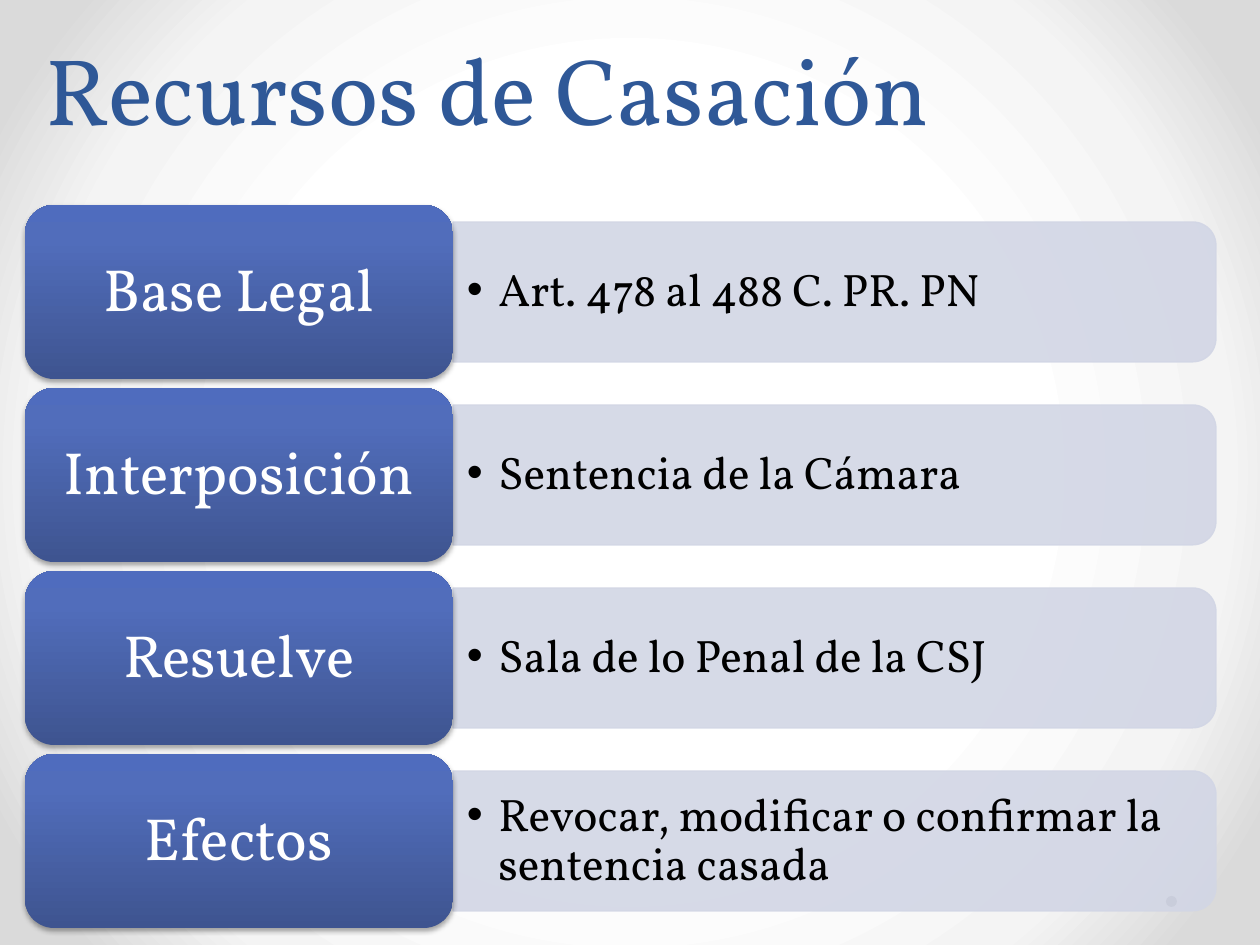
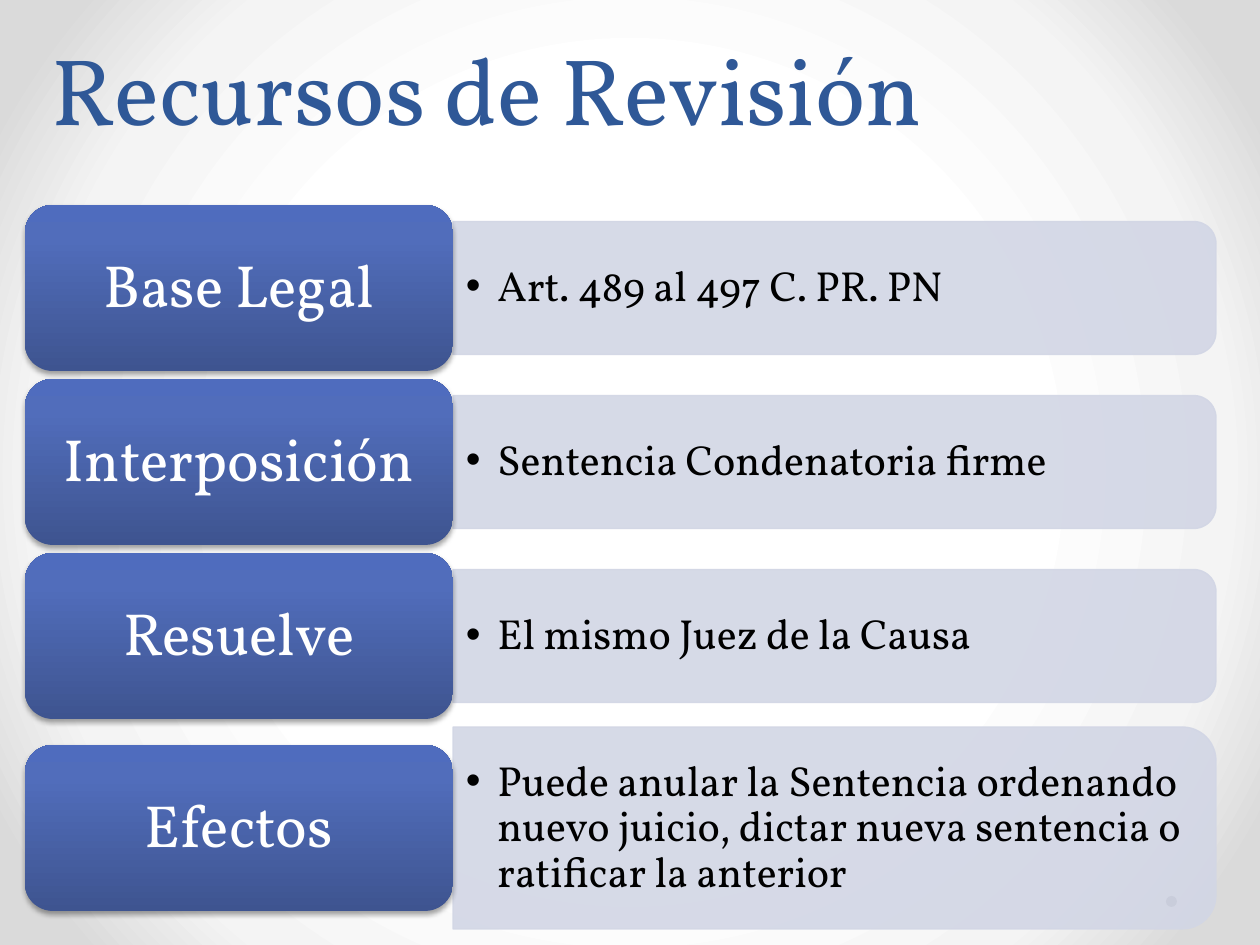
from lxml import etree
from pptx import Presentation
from pptx.dml.color import RGBColor
from pptx.enum.shapes import MSO_SHAPE
from pptx.enum.text import MSO_ANCHOR, MSO_AUTO_SIZE, PP_ALIGN
from pptx.oxml.ns import qn
from pptx.util import Pt

OVAL = MSO_SHAPE.OVAL
TILE = MSO_SHAPE.ROUNDED_RECTANGLE
BAND = MSO_SHAPE.ROUND_2_SAME_RECTANGLE
MIDDLE, BOTTOM = MSO_ANCHOR.MIDDLE, MSO_ANCHOR.BOTTOM
CENTER, LEFT = PP_ALIGN.CENTER, PP_ALIGN.LEFT
FIXED = MSO_AUTO_SIZE.NONE

WHITE = RGBColor(0xFF, 0xFF, 0xFF)
BLACK = RGBColor(0, 0, 0)
BLUE = RGBColor(0x2F, 0x58, 0x97)
PALE = RGBColor(0xD2, 0xD6, 0xE5)
GRAY = RGBColor(0x80, 0x80, 0x80)
SHEEN = [(0, RGBColor(0x3E, 0x54, 0x90)), (80, RGBColor(0x51, 0x6D, 0xBB)),
         (100, RGBColor(0x4F, 0x6C, 0xBE))]
GLOW = [(50, WHITE), (76, RGBColor(0xF4, 0xF4, 0xF4)),
        (92, RGBColor(0xDA, 0xDA, 0xDA))]

FONT = "Vollkorn"
SCALE = 914400 / 126  # EMU in one px
TOP = 205
TILE_X, TILE_W = 25, 428
BAND_X, BAND_W = 453, 763


def px(size):
    return round(size * SCALE)


def add(parent, tag, **attrs):
    node = etree.SubElement(parent, qn(tag))
    for key, val in attrs.items():
        node.set(key, str(val))
    return node


def blend(root, stops):
    """Give the gradient under root new stops and return it without a direction."""
    grad = root.find(".//" + qn("a:gradFill"))
    for node in list(grad):
        grad.remove(node)
    row = add(grad, "a:gsLst")
    for pos, color in stops:
        add(add(row, "a:gs", pos=pos * 1000), "a:srgbClr", val=color)
    return grad


class Deck:
    def __init__(self):
        self.prs = Presentation()
        self.prs.slide_width, self.prs.slide_height = px(1260), px(945)
        self.slide = None
        # Shared backdrop: a round glow
        master = self.prs.slide_master
        master.background.fill.gradient()
        way = add(blend(master._element, GLOW), "a:path", path="circle")
        add(way, "a:fillToRect", l=50000, t=50000, r=50000, b=50000)

    def page(self, title):
        self.slide = self.prs.slides.add_slide(self.prs.slide_layouts[5])
        head = self.slide.shapes.title
        head.left, head.top, head.width, head.height = map(px, (-5, -4, 984, 155))
        self.label(head, title, 54, BLUE, CENTER, BOTTOM, Pt(58))
        self.shape(OVAL, 1166, 896, 11, 11, GRAY)

    def label(self, shape, text, size, color, align, anchor, lead, after=0):
        frame = shape.text_frame
        frame.word_wrap, frame.auto_size = True, FIXED
        frame.vertical_anchor = anchor
        para = frame.paragraphs[0]
        para.alignment, para.line_spacing = align, lead
        para.space_before, para.space_after = Pt(0), Pt(after)
        run = para.add_run()
        run.text = text
        run.font.name, run.font.size = FONT, Pt(size)
        run.font.color.rgb = color
        return para

    def inset(self, shape, side, edge):
        frame = shape.text_frame
        frame.margin_left = frame.margin_right = px(side)
        frame.margin_top = frame.margin_bottom = px(edge)

    def shape(self, kind, x, y, w, h, color=None):
        shape = self.slide.shapes.add_shape(kind, px(x), px(y), px(w), px(h))
        shape.shadow.inherit = False
        shape.line.fill.background()
        if color is not None:
            shape.fill.solid()
            shape.fill.fore_color.rgb = color
        return shape

    def band(self, mid, high):
        # Turned a quarter, so width and height swap about the centre
        x = BAND_X + (BAND_W - high) / 2
        band = self.shape(BAND, x, mid - BAND_W / 2, high, BAND_W, PALE)
        band.rotation = 90
        band.line.color.rgb, band.line.width = PALE, Pt(0.75)
        for tint in band._element.spPr.iter(qn("a:srgbClr")):
            add(tint, "a:alpha", val=90000)

    def point(self, mid, high, text, size):
        pad = round(high * 0.05)
        tall = high - 2 * pad
        box = self.slide.shapes.add_textbox(
            px(BAND_X), px(mid - tall / 2), px(BAND_W - pad), px(tall))
        self.inset(box, size / 2 + 1, 6)
        para = self.label(box, text, size, BLACK, LEFT, MIDDLE, 0.9, size * 0.15)
        props = para._p.get_or_add_pPr()
        props.set("marL", str(px(31.5)))
        props.set("indent", str(-px(31.5)))
        add(props, "a:buFont", typeface="Arial")
        add(props, "a:buChar", char="•")

    def tile(self, mid, high, text):
        tile = self.shape(TILE, TILE_X, mid - high / 2, TILE_W, high)
        tile.fill.gradient()
        add(blend(tile._element, SHEEN), "a:lin", ang=16200000, scaled=0)
        cast = add(tile._element.spPr.find(qn("a:effectLst")), "a:outerShdw",
                   blurRad=Pt(3.1), dist=Pt(1.8), dir=5400000, rotWithShape=0)
        add(add(cast, "a:srgbClr", val=BLACK), "a:alpha", val=35000)
        self.inset(tile, 18, 9)
        self.label(tile, text, 34, WHITE, CENTER, MIDDLE, 0.9, 34 * 0.35)

    def rows(self, items, high, gap, size):
        """Stack the rows; each is as tall as its tile or its band."""
        y = TOP
        for name, text, thick in items:
            tall = max(high, thick)
            mid = y + tall / 2
            self.band(mid, thick)
            self.point(mid, thick, text, size)
            self.tile(mid, high, name)
            y += tall + gap


NAMES = ["Base Legal", "Interposición", "Resuelve", "Efectos"]

# title, texts, band heights, tile height, gap, text size
PAGES = [
    ("Recursos de Casación",
     ["Art. 478 al 488 C. PR. PN",
      "Sentencia de la Cámara",
      "Sala de lo Penal de la CSJ",
      "Revocar, modificar o confirmar la sentencia casada"],
     [140] * 4, 174, 9, 26),
    ("Recursos de Revisión",
     ["Art. 489 al 497 C. PR. PN",
      "Sentencia Condenatoria firme",
      "El mismo Juez de la Causa",
      "Puede anular la Sentencia ordenando nuevo juicio, "
      "dictar nueva sentencia o ratificar la anterior"],
     [133] * 3 + [202], 166, 8, 24),
]


def main():
    deck = Deck()
    for title, texts, bands, high, gap, size in PAGES:
        deck.page(title)
        deck.rows(zip(NAMES, texts, bands), high, gap, size)
    deck.prs.save("out.pptx")


if __name__ == "__main__":
    main()
